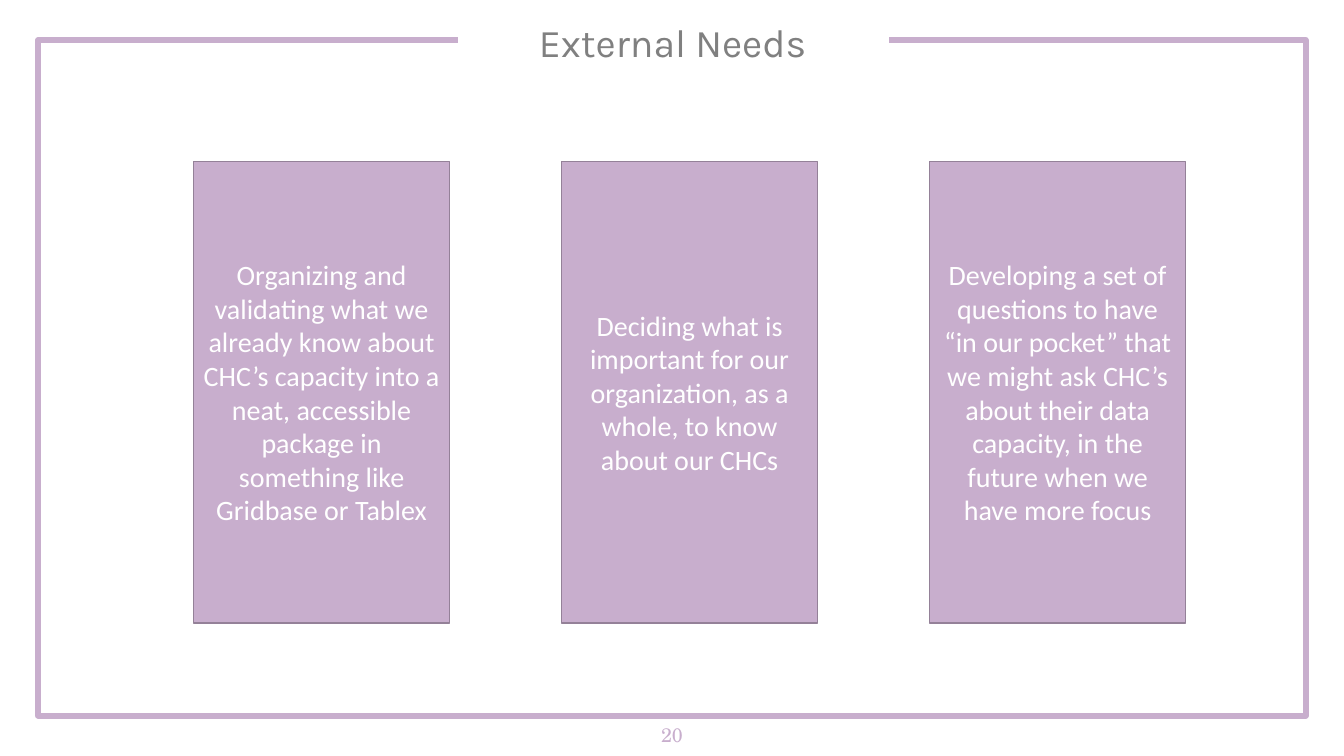
from pptx import Presentation
from pptx.dml.color import RGBColor
from pptx.enum.shapes import MSO_SHAPE
from pptx.enum.text import MSO_ANCHOR, PP_ALIGN
from pptx.util import Inches, Pt

LILAC = RGBColor(0xC8, 0xAE, 0xCD)
PLUM = RGBColor(0x94, 0x81, 0x98)
GRAY = RGBColor(0x80, 0x80, 0x80)
WHITE = RGBColor(0xFF, 0xFF, 0xFF)

SLIDE_WIDTH, SLIDE_HEIGHT = 13.33, 7.5
FRAME_POINTS = [(4.54, 0.4), (0.38, 0.4), (0.38, 7.1),
                (12.95, 7.1), (12.95, 0.4), (8.82, 0.4)]
CARD_LEFT, CARD_TOP, CARD_WIDTH, CARD_HEIGHT = 1.92, 1.6, 2.54, 4.58
CARD_PITCH = 3.65
NEEDS = [
    "Organizing and validating what we already know about CHC’s capacity "
    "into a neat, accessible package in something like Gridbase or Tablex",
    "Deciding what is important for our organization, as a whole, "
    "to know about our CHCs",
    "Developing a set of questions to have “in our pocket” that we might ask "
    "CHC’s about their data capacity, in the future when we have more focus",
]


class NeedsSlide:
    """Holds the text styles and the slide being drawn."""

    title_style = {"name": "Karla", "size": Pt(28)}
    card_style = {"name": "Calibri", "size": Pt(20)}
    number_style = {"name": "TeX Gyre Schola", "size": Pt(14)}

    def __init__(self, slide):
        self.shapes = slide.shapes

    def set_text(self, shape, text, style, color, anchor, spacing=1.0):
        frame = shape.text_frame
        layout = {"word_wrap": True, "vertical_anchor": anchor,
                  "margin_left": Inches(0.1), "margin_right": Inches(0.1)}
        for attribute, value in layout.items():
            setattr(frame, attribute, value)
        paragraph = frame.paragraphs[0]
        paragraph.alignment = PP_ALIGN.CENTER
        paragraph.line_spacing = spacing
        run = paragraph.add_run()
        run.text = text
        for attribute, value in style.items():
            setattr(run.font, attribute, value)
        run.font.color.rgb = color

    def outline(self, shape, color, width):
        shape.shadow.inherit = False
        shape.line.color.rgb = color
        shape.line.width = Pt(width)

    def open_frame(self, points):
        start, *corners = [(Inches(x), Inches(y)) for x, y in points]
        builder = self.shapes.build_freeform(*start)
        builder.add_line_segments(corners, close=False)
        frame = builder.convert_to_shape()
        frame.fill.background()
        self.outline(frame, LILAC, 4.25)

    def label(self, box, text, style, color, anchor, spacing=1.0):
        label = self.shapes.add_textbox(*map(Inches, box))
        label.text_frame.margin_top = Inches(0.1)
        label.text_frame.margin_bottom = Inches(0.1)
        self.set_text(label, text, style, color, anchor, spacing)

    def card(self, box, text):
        card = self.shapes.add_shape(MSO_SHAPE.RECTANGLE, *map(Inches, box))
        card.fill.solid()
        card.fill.fore_color.rgb = LILAC
        self.outline(card, PLUM, 1)
        self.set_text(card, text, self.card_style, WHITE, MSO_ANCHOR.MIDDLE)


def main():
    presentation = Presentation()
    presentation.slide_width = Inches(SLIDE_WIDTH)
    presentation.slide_height = Inches(SLIDE_HEIGHT)
    needs = NeedsSlide(presentation.slides.add_slide(presentation.slide_layouts[6]))

    # Frame, open around the title
    needs.open_frame(FRAME_POINTS)

    # Page number and title
    needs.label((0, 6.7, SLIDE_WIDTH, 1.17), "20",
                needs.number_style, LILAC, MSO_ANCHOR.MIDDLE)
    needs.label((4.73, 0.13, 3.88, 1.07), "External Needs",
                needs.title_style, GRAY, MSO_ANCHOR.TOP, spacing=0.9)

    # One card per need
    for column, need in enumerate(NEEDS):
        left = CARD_LEFT + column * CARD_PITCH
        needs.card((left, CARD_TOP, CARD_WIDTH, CARD_HEIGHT), need)

    presentation.save("out.pptx")


if __name__ == "__main__":
    main()
